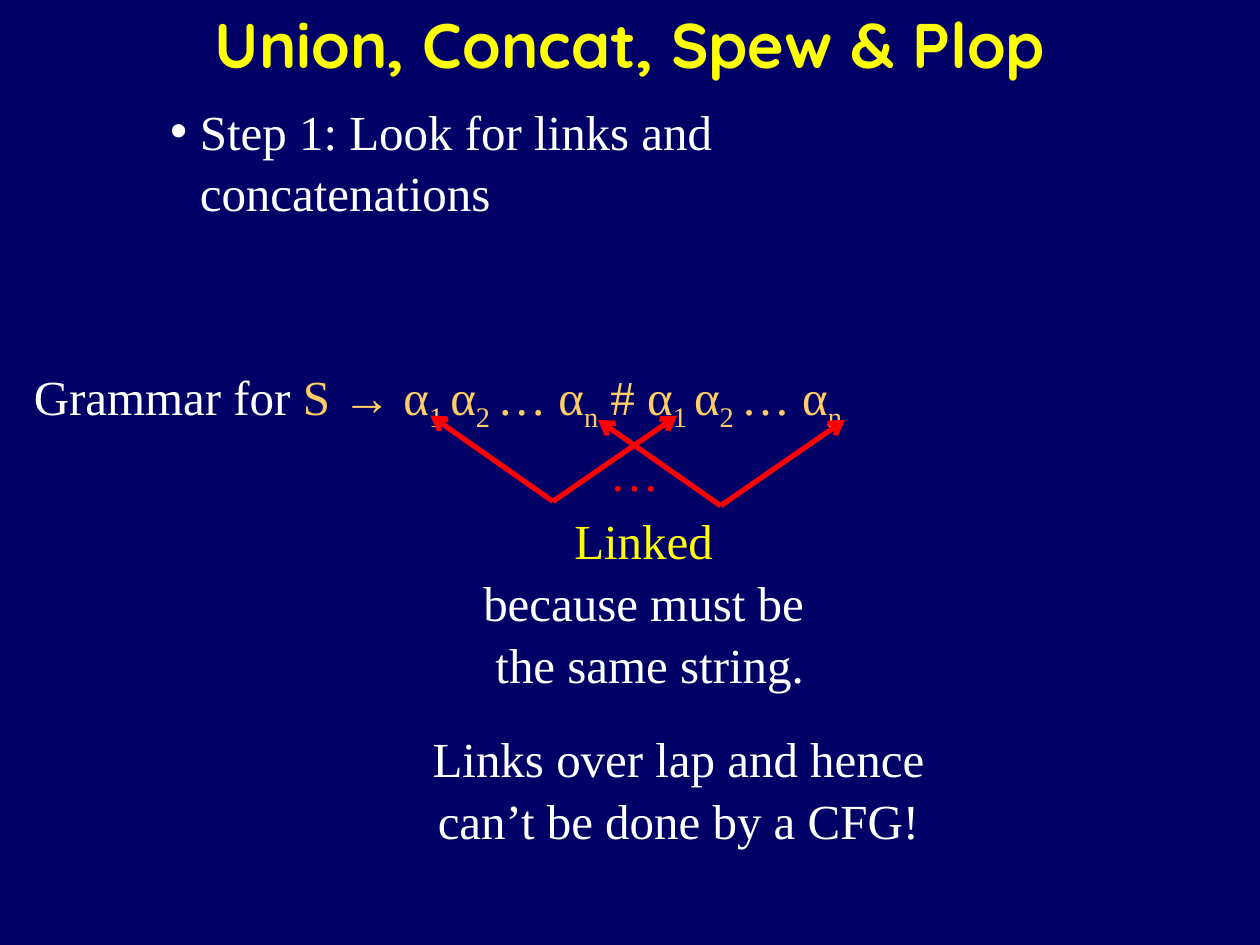
"""Build the slide on linked strings in a grammar that no CFG can make."""
from lxml import etree
from pptx import Presentation
from pptx.dml.color import RGBColor
from pptx.enum.shapes import MSO_CONNECTOR
from pptx.enum.text import MSO_ANCHOR, MSO_AUTO_SIZE, PP_ALIGN
from pptx.oxml.ns import qn
from pptx.util import Pt

LINE = MSO_CONNECTOR.STRAIGHT
LEFT, CENTER = PP_ALIGN.LEFT, PP_ALIGN.CENTER
TOP, MIDDLE = MSO_ANCHOR.TOP, MSO_ANCHOR.MIDDLE
FIXED = MSO_AUTO_SIZE.NONE

NAVY = RGBColor(0x00, 0x00, 0x66)
YELLOW = RGBColor(0xFF, 0xFF, 0x00)
WHITE = RGBColor(0xFF, 0xFF, 0xFF)
GOLD = RGBColor(0xFF, 0xCC, 0x66)
RED = RGBColor(0xFF, 0x00, 0x00)
SERIF = "Times New Roman"


def style(font, color, size=28, name=SERIF, bold=False):
    """Set the look of a font."""
    font.name, font.size, font.bold = name, Pt(size), bold
    font.color.rgb = color


def write(shape, box, rows, align=LEFT, wrap=False):
    """Place a shape and fill it with rows of text and colour."""
    shape.left, shape.top, shape.width, shape.height = map(Pt, box)
    frame = shape.text_frame
    frame.text = "\n".join(text for text, color in rows)
    frame.word_wrap, frame.auto_size = wrap, FIXED
    frame.vertical_anchor = TOP
    for para, (text, color) in zip(frame.paragraphs, rows):
        para.text = text
        para.alignment = align
        para.space_before = Pt(0)
        para.line_spacing = 1.05
        for run in para.runs:
            style(run.font, color)
    return frame


deck = Presentation()
deck.slide_width, deck.slide_height = Pt(720), Pt(540)
slide = deck.slides.add_slide(deck.slide_layouts[1])
slide.background.fill.solid()
slide.background.fill.fore_color.rgb = NAVY
shapes = slide.shapes

title = write(shapes.title, (54, -20, 612, 90),
              [("Union, Concat, Spew & Plop", YELLOW)], CENTER, True)
title.vertical_anchor = MIDDLE
title.paragraphs[0].line_spacing = 1.0
style(title.paragraphs[0].runs[0].font, YELLOW, 36, "Quicksand", True)

step = write(slide.placeholders[1], (90, 52.5, 490, 75),
             [("Step 1: Look for links and concatenations", WHITE)], wrap=True)
props = step.paragraphs[0]._p.get_or_add_pPr()
props.set("marL", str(Pt(17)))
props.set("indent", str(Pt(-17)))

grammar = write(shapes.add_textbox(0, 0, 0, 0), (12.25, 203.75, 678, 41),
                [("Grammar for ", WHITE)], wrap=True)
parts = ["S → α", "1 ", "α", "2 ", "… α", "n",
         " # α", "1 ", "α", "2 ", "… α", "n"]
for num, part in enumerate(parts):
    run = grammar.paragraphs[0].add_run()
    run.text = part
    style(run.font, GOLD)
    if num % 2:
        run._r.get_or_add_rPr().set("baseline", "-25000")

for x, y in [(316, 286.5), (411.8, 289)]:
    for step_x in (-70, 71):
        link = shapes.add_connector(LINE, Pt(x), Pt(y), Pt(x + step_x), Pt(y - 49))
        link.line.color.rgb = RED
        link.line.width = Pt(3)
        etree.SubElement(link.line._get_or_add_ln(), qn("a:tailEnd"), type="arrow")
        etree.SubElement(link._element.spPr, qn("a:effectLst"))

notes = [
    ((268, 286.5, 206.5, 109.5),
     [("Linked ", YELLOW), ("because must be \vthe same string.", WHITE)]),
    ((341, 247.5, 43, 41), [("…", RED)]),
    ((235.5, 411, 304.5, 75),
     [("Links over lap and hence", WHITE), ("can’t be done by a CFG!", WHITE)]),
]
for box, rows in notes:
    write(shapes.add_textbox(0, 0, 0, 0), box, rows, CENTER)

deck.save("out.pptx")
